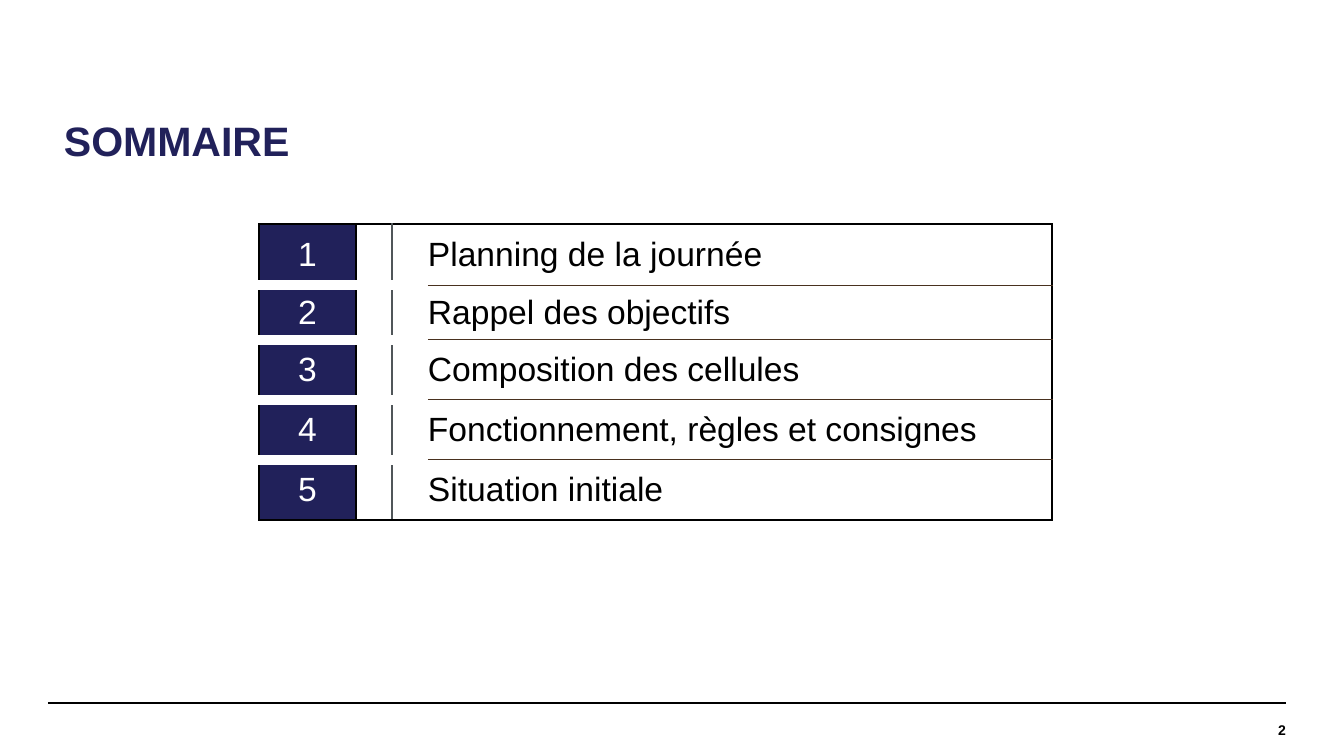
from dataclasses import dataclass

from lxml import etree
from pptx import Presentation
from pptx.dml.color import RGBColor
from pptx.enum.shapes import MSO_CONNECTOR
from pptx.enum.text import MSO_ANCHOR, MSO_AUTO_SIZE, PP_ALIGN
from pptx.oxml.ns import qn
from pptx.util import Emu, Pt

STRAIGHT = MSO_CONNECTOR.STRAIGHT
MIDDLE = MSO_ANCHOR.MIDDLE
NO_AUTOFIT = MSO_AUTO_SIZE.NONE
LEFT, CENTER, RIGHT = PP_ALIGN.LEFT, PP_ALIGN.CENTER, PP_ALIGN.RIGHT

SLIDE_WIDTH, SLIDE_HEIGHT = 1344, 756
EMU_PER_PX = 9144000 / SLIDE_WIDTH
TITLE_ONLY_LAYOUT = 5


@dataclass(frozen=True)
class Theme:
    font: str = "Arial"
    navy: str = "21215A"
    black: str = "000000"
    white: str = "FFFFFF"
    gray: str = "505659"
    brown: str = "49311F"
    title_size: float = 22
    body_size: float = 18
    number_size: float = 7.5


THEME = Theme()
OUTLINE = (THEME.black, 1)
ROW_GAP = (THEME.white, 6)
DIVIDER = (THEME.gray, 1.5)
RULE = (THEME.brown, 0.5)

AGENDA = [
    "Planning de la journée",
    "Rappel des objectifs",
    "Composition des cellules",
    "Fonctionnement, règles et consignes",
    "Situation initiale",
]
COLUMN_WIDTHS = [97, 36, 36, 624]
ROW_HEIGHTS = [61, 55, 60, 60, 60]
COLUMN_EDGES = [OUTLINE, OUTLINE, DIVIDER, None, OUTLINE]
ROW_EDGES = [ROW_GAP, ROW_GAP, ROW_GAP, RULE]


def px(length):
    return Emu(round(length * EMU_PER_PX))


def box(*lengths):
    return [px(length) for length in lengths]


def set_margins(target, left, top, right, bottom):
    target.margin_left, target.margin_top = px(left), px(top)
    target.margin_right, target.margin_bottom = px(right), px(bottom)


def write(text_frame, text, size, color, alignment, bold=False):
    text_frame.text = text
    paragraph = text_frame.paragraphs[0]
    paragraph.alignment = alignment
    font = paragraph.runs[0].font
    font.name, font.size, font.bold = THEME.font, Pt(size), bold
    font.color.rgb = RGBColor.from_string(color)
    return paragraph


def add_title(slide, text):
    title = slide.shapes.title
    title.left, title.top, title.width, title.height = box(48, 98, 840, 90)
    text_frame = title.text_frame
    text_frame.auto_size = NO_AUTOFIT
    text_frame.vertical_anchor = MIDDLE
    set_margins(text_frame, 16, 7, 13, 7)
    paragraph = write(text_frame, text, THEME.title_size, THEME.navy, LEFT, True)
    paragraph.line_spacing = 0.9


def set_borders(cell, borders):
    properties = cell._tc.get_or_add_tcPr()
    for index, (side, border) in enumerate(zip("LRTB", borders)):
        line = etree.Element(qn(f"a:ln{side}"))
        if border:
            color, width = border
            line.set("w", str(Pt(width)))
            fill = etree.SubElement(line, qn("a:solidFill"))
            etree.SubElement(fill, qn("a:srgbClr"), val=color)
        else:
            etree.SubElement(line, qn("a:noFill"))
        properties.insert(index, line)


def add_agenda(slide, items):
    frame = slide.shapes.add_table(
        len(items), len(COLUMN_WIDTHS),
        *box(259, 224, sum(COLUMN_WIDTHS), sum(ROW_HEIGHTS)))
    table = frame.table
    table.first_row = table.horz_banding = False
    for column, width in zip(table.columns, COLUMN_WIDTHS):
        column.width = px(width)
    for row, height in zip(table.rows, ROW_HEIGHTS):
        row.height = px(height)

    last_row = len(items) - 1
    for row_index, item in enumerate(items):
        for column_index, row_edge in enumerate(ROW_EDGES):
            cell = table.cell(row_index, column_index)
            cell.fill.background()
            cell.vertical_anchor = MIDDLE
            top = row_edge if row_index else OUTLINE
            bottom = row_edge if row_index < last_row else OUTLINE
            left, right = COLUMN_EDGES[column_index:column_index + 2]
            set_borders(cell, (left, right, top, bottom))

        number, label = table.cell(row_index, 0), table.cell(row_index, 3)
        number.fill.solid()
        number.fill.fore_color.rgb = RGBColor.from_string(THEME.navy)
        write(number.text_frame, str(row_index + 1), THEME.body_size, THEME.white, CENTER)
        set_margins(label, 0, 7, 13, 7)
        write(label.text_frame, item, THEME.body_size, THEME.black, LEFT)


def add_footer_line(slide):
    line = slide.shapes.add_connector(STRAIGHT, *box(48, 703, 1286, 703))
    line.line.color.rgb = RGBColor.from_string(THEME.black)
    line.line.width = Pt(0.8)
    etree.SubElement(line._element.spPr, qn("a:effectLst"))


def add_page_number(slide, number):
    text_frame = slide.shapes.add_textbox(*box(1087, 703, 199, 53)).text_frame
    text_frame.word_wrap = True
    text_frame.vertical_anchor = MIDDLE
    set_margins(text_frame, 0, 0, 0, 0)
    write(text_frame, str(number), THEME.number_size, THEME.black, RIGHT, True)


def main():
    presentation = Presentation()
    presentation.slide_width, presentation.slide_height = box(SLIDE_WIDTH, SLIDE_HEIGHT)
    slide = presentation.slides.add_slide(presentation.slide_layouts[TITLE_ONLY_LAYOUT])
    add_footer_line(slide)
    add_title(slide, "SOMMAIRE")
    add_agenda(slide, AGENDA)
    add_page_number(slide, 2)
    presentation.save("out.pptx")


if __name__ == "__main__":
    main()
